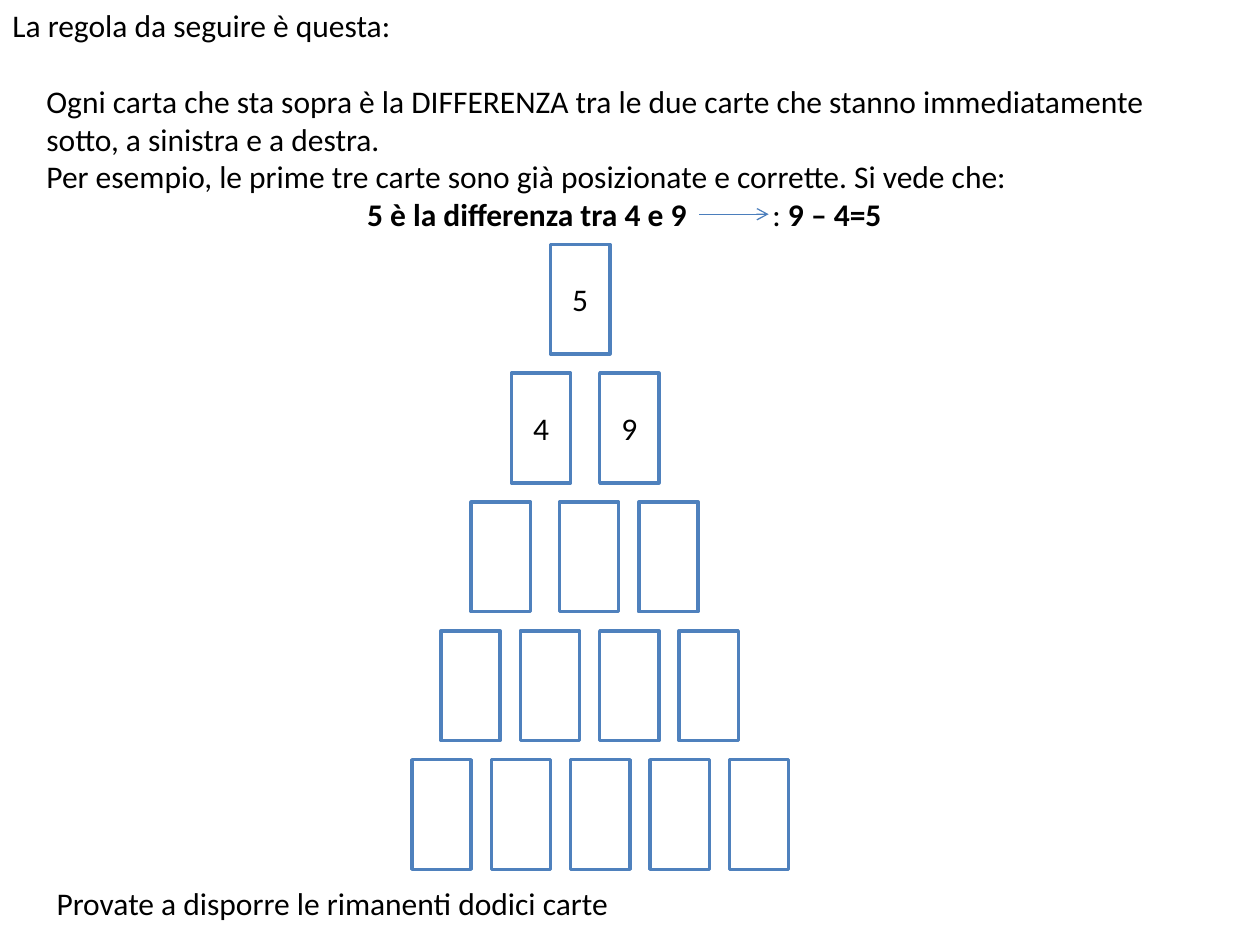
from lxml import etree
from pptx import Presentation
from pptx import util as u
from pptx.dml.color import RGBColor
from pptx.enum import shapes, text
from pptx.oxml.ns import qn

BLACK = RGBColor(0x00, 0x00, 0x00)
WHITE = RGBColor(0xFF, 0xFF, 0xFF)
CARD_BLUE = RGBColor(0x4F, 0x81, 0xBD)
ARROW_BLUE = RGBColor(0x4B, 0x7E, 0xBC)

BODY = {"name": "Calibri", "size": u.Pt(18)}
BOLD = {"bold": True}

CARD_WIDTH, CARD_HEIGHT = 0.47, 0.87
TOP, ROW_PITCH, COLUMN_PITCH = 1.94, 1.0225, 0.63
WIDE_PITCH = 0.7
ARROW_GAP = 40.7  # points added to one space, leaving room for the arrow

# Left edge of each row, distance to its second card, and the cards' numbers
ROWS = [
    (4.37, COLUMN_PITCH, ["5"]),
    (4.06, WIDE_PITCH, ["4", "9"]),
    (3.74, WIDE_PITCH, [""] * 3),
    (3.50, COLUMN_PITCH, [""] * 4),
    (3.27, COLUMN_PITCH, [""] * 5),
]


def add_span(para, words, style=None):
    span = para.add_run()
    span.text = words
    for name, value in {**BODY, **(style or {})}.items():
        setattr(span.font, name, value)
    span.font.color.rgb = BLACK
    return span


def add_text(page, left, top, width, height, paragraphs):
    """Add a text box; each paragraph is an alignment and its (words, style) spans."""
    box = page.shapes.add_textbox(*map(u.Inches, (left, top, width, height)))
    frame = box.text_frame
    frame.word_wrap = True
    frame.auto_size = text.MSO_AUTO_SIZE.SHAPE_TO_FIT_TEXT
    for index, (alignment, spans) in enumerate(paragraphs):
        para = frame.add_paragraph() if index else frame.paragraphs[0]
        para.alignment = alignment
        for words, style in spans:
            add_span(para, words, style)
    return box


def add_card(page, left, top, number):
    card = page.shapes.add_shape(
        shapes.MSO_SHAPE.RECTANGLE,
        *map(u.Inches, (left, top, CARD_WIDTH, CARD_HEIGHT)))
    card.shadow.inherit = False
    card.fill.solid()
    card.fill.fore_color.rgb = WHITE
    card.line.color.rgb = CARD_BLUE
    card.line.width = u.Pt(2)
    if number:
        frame = card.text_frame
        frame.vertical_anchor = text.MSO_ANCHOR.MIDDLE
        para = frame.paragraphs[0]
        para.alignment = text.PP_ALIGN.CENTER
        add_span(para, number)


def add_pyramid(page):
    for row, (start, first_step, numbers) in enumerate(ROWS):
        for column, number in enumerate(numbers):
            offset = first_step + (column - 1) * COLUMN_PITCH if column else 0
            add_card(page, start + offset, TOP + row * ROW_PITCH, number)


def add_arrow(page, left, right, height):
    arrow = page.shapes.add_connector(
        shapes.MSO_CONNECTOR.STRAIGHT,
        *map(u.Inches, (left, height, right, height)))
    arrow.line.color.rgb = ARROW_BLUE
    arrow.line.width = u.Pt(0.75)
    etree.SubElement(arrow.line._get_or_add_ln(), qn("a:tailEnd"), type="arrow")
    etree.SubElement(arrow._element.spPr, qn("a:effectLst"))


def main():
    deck = Presentation()
    deck.slide_width, deck.slide_height = u.Inches(10), u.Inches(7.5)
    page = deck.slides.add_slide(deck.slide_layouts[6])
    left, center = text.PP_ALIGN.LEFT, text.PP_ALIGN.CENTER

    add_text(page, 0, 0, 8.35, 0.4,
             [(left, [("La regola da seguire è questa:", None)])])
    rule = add_text(page, 0.27, 0.6, 9.37, 1.31, [
        (left, [("Ogni carta che sta sopra è la DIFFERENZA tra le due carte che "
                 "stanno immediatamente sotto, a sinistra e a destra.", None)]),
        (left, [("Per esempio, le prime tre carte sono già posizionate e "
                 "corrette. Si vede che:", None)]),
        (center, [("5 è la differenza tra 4 e 9", BOLD), (" ", BOLD),
                  (" : ", None), ("9 – 4=5", BOLD)]),
    ])
    gap = rule.text_frame.paragraphs[-1].runs[1]
    gap.font._element.set("spc", str(round(ARROW_GAP * 100)))

    add_pyramid(page)
    add_arrow(page, 5.55, 6.1, 1.7)
    add_text(page, 0.35, 6.97, 9.45, 0.4,
             [(left, [("Provate a disporre le rimanenti dodici carte", None)])])
    deck.save("out.pptx")


if __name__ == "__main__":
    main()
